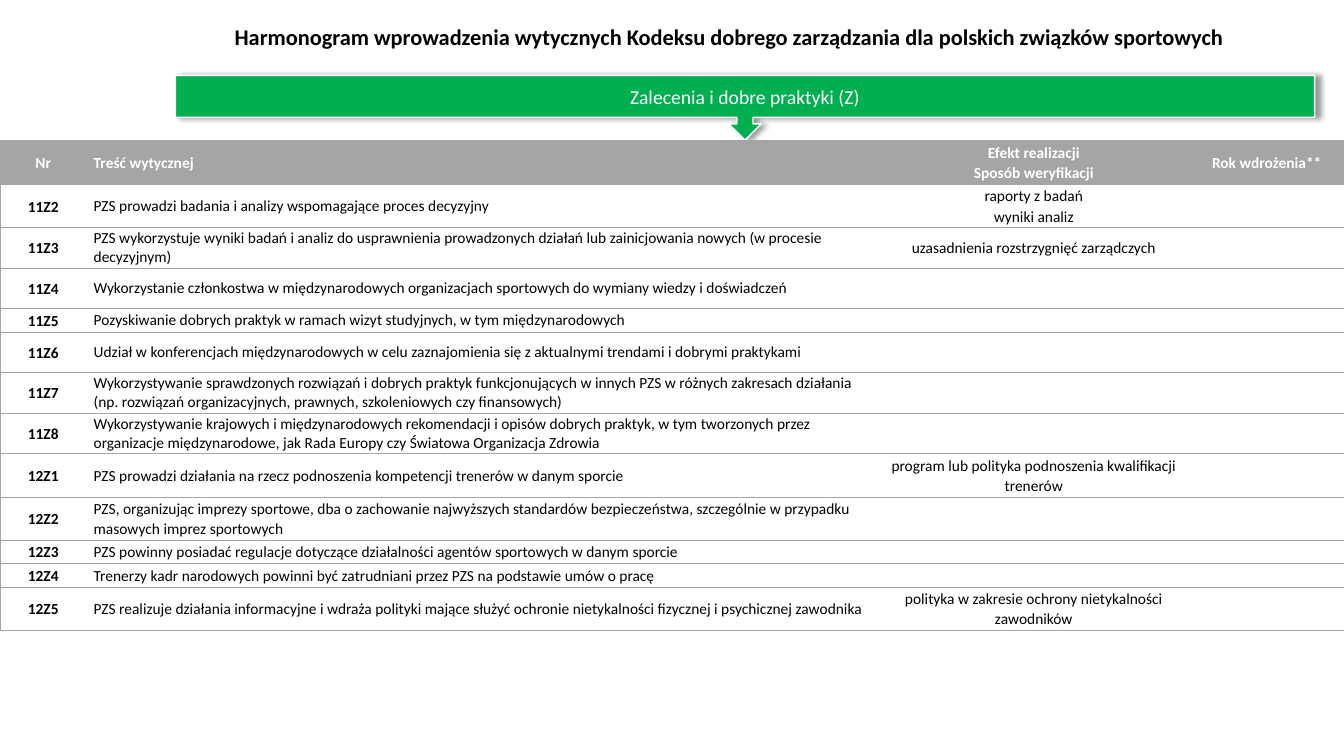
from lxml.etree import SubElement
from pptx import Presentation
from pptx.dml.color import RGBColor
from pptx.enum.shapes import MSO_SHAPE as Shape
from pptx.enum.text import MSO_ANCHOR as Anchor, PP_ALIGN as Align
from pptx.oxml.ns import qn
from pptx.util import Cm, Pt

BLACK = RGBColor(0x00, 0x00, 0x00)
WHITE = RGBColor(0xFF, 0xFF, 0xFF)
GREEN = RGBColor(0x00, 0xB0, 0x50)
GREY = RGBColor(0xA5, 0xA5, 0xA5)

TITLE = ("Harmonogram wprowadzenia wytycznych Kodeksu dobrego zarządzania "
         "dla polskich związków sportowych")
COLUMN_WIDTHS = [2.18, 19.94, 7.85, 3.61, 0.28]
HEADER = ["Nr", "Treść wytycznej", "Efekt realizacji\nSposób weryfikacji", "Rok wdrożenia**", ""]
HEADER_HEIGHT = 1.12
LOW, MIDDLE, TALL = 0.59, 1.02, 1.09
GUIDELINES = [
    ("11Z2", TALL, "PZS prowadzi badania i analizy wspomagające proces decyzyjny",
     "raporty z badań\nwyniki analiz"),
    ("11Z3", MIDDLE, "PZS wykorzystuje wyniki badań i analiz do usprawnienia prowadzonych działań "
     "lub zainicjowania nowych (w procesie decyzyjnym)", "uzasadnienia rozstrzygnięć zarządczych"),
    ("11Z4", MIDDLE, "Wykorzystanie członkostwa w międzynarodowych organizacjach sportowych "
     "do wymiany wiedzy i doświadczeń", ""),
    ("11Z5", LOW, "Pozyskiwanie dobrych praktyk w ramach wizyt studyjnych, w tym międzynarodowych", ""),
    ("11Z6", MIDDLE, "Udział w konferencjach międzynarodowych w celu zaznajomienia się "
     "z aktualnymi trendami i dobrymi praktykami", ""),
    ("11Z7", MIDDLE, "Wykorzystywanie sprawdzonych rozwiązań i dobrych praktyk funkcjonujących "
     "w innych PZS w różnych zakresach działania (np. rozwiązań organizacyjnych, prawnych, "
     "szkoleniowych czy finansowych)", ""),
    ("11Z8", MIDDLE, "Wykorzystywanie krajowych i międzynarodowych rekomendacji i opisów dobrych "
     "praktyk, w tym tworzonych przez organizacje międzynarodowe, jak Rada Europy czy Światowa "
     "Organizacja Zdrowia", ""),
    ("12Z1", TALL, "PZS prowadzi działania na rzecz podnoszenia kompetencji trenerów w danym sporcie",
     "program lub polityka podnoszenia kwalifikacji trenerów"),
    ("12Z2", TALL, "PZS, organizując imprezy sportowe, dba o zachowanie najwyższych standardów "
     "bezpieczeństwa, szczególnie w przypadku masowych imprez sportowych", ""),
    ("12Z3", LOW, "PZS powinny posiadać regulacje dotyczące działalności agentów sportowych "
     "w danym sporcie", ""),
    ("12Z4", LOW, "Trenerzy kadr narodowych powinni być zatrudniani przez PZS na podstawie umów "
     "o pracę", ""),
    ("12Z5", TALL, "PZS realizuje działania informacyjne i wdraża polityki mające służyć ochronie "
     "nietykalności fizycznej i psychicznej zawodnika",
     "polityka w zakresie ochrony nietykalności zawodników"),
]


class SchedulePage:
    font_name = "Calibri"

    def __init__(self, page):
        self.page = page

    def fill_text(self, frame, text, size, color=BLACK, bold=False, align=Align.CENTER, spacing=1.0):
        """Fill a text frame, one paragraph per line of text."""
        frame.word_wrap = True
        look = {"name": self.font_name, "size": Pt(size), "bold": bold}
        for index, line in enumerate(text.split("\n")):
            para = frame.add_paragraph() if index else frame.paragraphs[0]
            para.alignment = align
            para.line_spacing = spacing
            if not line:
                # An empty cell takes its height from the end mark.
                SubElement(para._p, qn("a:endParaRPr"), sz=str(size * 100))
                continue
            span = para.add_run()
            span.text = line
            for name, value in look.items():
                setattr(span.font, name, value)
            span.font.color.rgb = color

    def title(self, text, left, top, width, height):
        box = self.page.shapes.add_textbox(Cm(left), Cm(top), Cm(width), Cm(height))
        box.text_frame.vertical_anchor = Anchor.MIDDLE
        self.fill_text(box.text_frame, text, 16, bold=True, spacing=0.9)

    def callout(self, text, left, top, width, height):
        box = self.page.shapes.add_shape(
            Shape.DOWN_ARROW_CALLOUT, Cm(left), Cm(top), Cm(width), Cm(height))
        box.fill.solid()
        box.fill.fore_color.rgb = GREEN
        box.line.color.rgb = WHITE
        box.line.width = Pt(1)
        box.text_frame.vertical_anchor = Anchor.MIDDLE
        self.fill_text(box.text_frame, text, 14, WHITE)
        self.cast_shadow(box)

    def cast_shadow(self, box):
        box.shadow.inherit = False
        effects = box._element.spPr.find(qn("a:effectLst"))
        shadow = SubElement(effects, qn("a:outerShdw"), blurRad=str(Pt(4)), dist=str(Pt(3)),
                            dir="0", algn="l", rotWithShape="0")
        color = SubElement(shadow, qn("a:srgbClr"), val=str(BLACK))
        SubElement(color, qn("a:alpha"), val="40000")

    def border(self, cell, sides):
        """Draw thin grey lines on the given sides and none on the others."""
        properties = cell._tc.get_or_add_tcPr()
        for position, side in enumerate("LRTB"):
            line = properties.makeelement(qn(f"a:ln{side}"), {"w": str(Pt(0.5))})
            properties.insert(position, line)
            if side in sides:
                fill = SubElement(line, qn("a:solidFill"))
                SubElement(fill, qn("a:srgbClr"), val=str(GREY))
            else:
                SubElement(line, qn("a:noFill"))

    def cell(self, cell, text, column, is_header, spacing):
        margins = {"margin_left": Cm(0.18), "margin_right": Cm(0.18), "margin_top": 0,
                   "margin_bottom": 0, "vertical_anchor": Anchor.MIDDLE}
        if column == len(COLUMN_WIDTHS) - 1:
            margins.update(margin_left=0, margin_right=0)
        for name, value in margins.items():
            setattr(cell, name, value)
        if is_header:
            cell.fill.solid()
            cell.fill.fore_color.rgb = GREY
        else:
            cell.fill.background()
        edges = {0: "L", len(COLUMN_WIDTHS) - 1: "R"}
        self.border(cell, "TB" + edges.get(column, ""))
        self.fill_text(cell.text_frame, text, 11, WHITE if is_header else BLACK,
                       bold=is_header or column == 0,
                       align=Align.LEFT if column == 1 else Align.CENTER, spacing=spacing)

    def guideline_table(self, top):
        heights = [HEADER_HEIGHT] + [height for _, height, _, _ in GUIDELINES]
        rows = [HEADER] + [[number, content, effect, "", ""]
                           for number, _, content, effect in GUIDELINES]
        table = self.page.shapes.add_table(
            len(rows), len(COLUMN_WIDTHS), 0, Cm(top),
            Cm(sum(COLUMN_WIDTHS)), Cm(sum(heights))).table
        table.horz_banding = False
        for column, width in zip(table.columns, COLUMN_WIDTHS):
            column.width = Cm(width)
        for row, (height, texts) in enumerate(zip(heights, rows)):
            table.rows[row].height = Cm(height)
            for column, text in enumerate(texts):
                single = column == 1 and texts[0].startswith("11")
                self.cell(table.cell(row, column), text, column, row == 0,
                          1.0 if single else 1.07)
        table.cell(0, 3).merge(table.cell(0, 4))


def main():
    deck = Presentation()
    deck.slide_width, deck.slide_height = Cm(33.86), Cm(19.05)
    schedule = SchedulePage(deck.slides.add_slide(deck.slide_layouts[6]))
    schedule.callout("Zalecenia i dobre praktyki (Z)", 4.42, 1.9, 28.7, 1.63)
    schedule.title(TITLE, 3.25, 0.25, 30.25, 1.42)
    schedule.guideline_table(3.53)
    deck.save("out.pptx")


if __name__ == "__main__":
    main()
